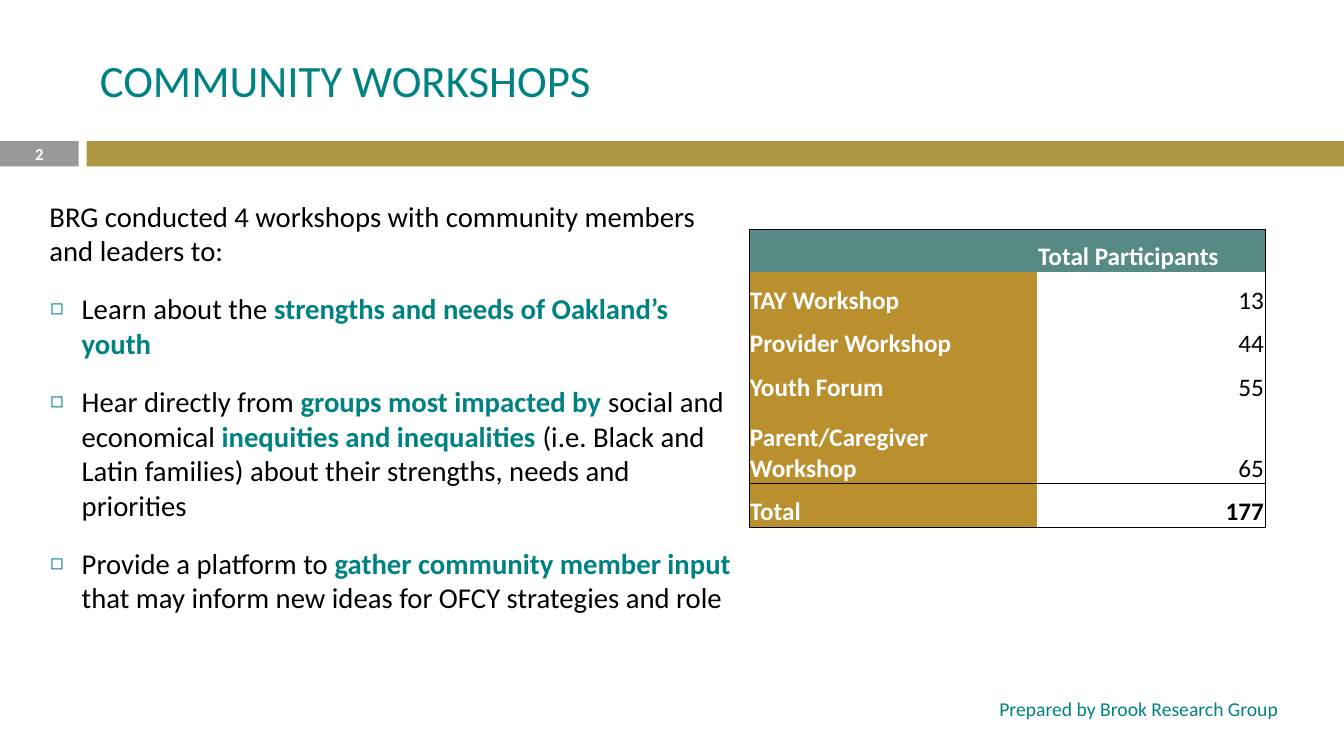
from dataclasses import dataclass

from pptx import Presentation
from pptx import util as u
from pptx.dml.color import RGBColor
from pptx.enum import shapes, text
from pptx.oxml import parse_xml
from pptx.oxml.ns import nsdecls, qn

WIDE, HIGH = u.Inches(13.33), u.Inches(7.5)
COLS, ROWS = 40, 30
LEFT, MID, RIGHT = text.PP_ALIGN.LEFT, text.PP_ALIGN.CENTER, text.PP_ALIGN.RIGHT


@dataclass(frozen=True)
class Theme:
    """Colours, font and type sizes of the slide."""
    face: str = "Calibri"
    teal: str = "008283"
    gold: str = "AE9742"
    gray: str = "999999"
    head: str = "578A85"
    side: str = "BA8F2D"
    ink: str = "000000"
    white: str = "FFFFFF"
    title: float = 32
    body: float = 20.5
    cell: float = 18
    foot: float = 14
    page: float = 11.9


def col(n):
    """Return the length of n grid columns."""
    return u.Emu(round(WIDE * n / COLS))


def row(n):
    """Return the length of n grid rows."""
    return u.Emu(round(HIGH * n / ROWS))


class Board:
    """Draws styled elements on one slide."""

    def __init__(self, slide, theme):
        """Keep the slide and its theme."""
        self.slide, self.theme = slide, theme

    def box(self, x, y, w, h):
        """Turn grid units into lengths."""
        return col(x), row(y), col(w), row(h)

    def place(self, item, *spot):
        """Move a placeholder to a grid spot."""
        item.left, item.top, item.width, item.height = self.box(*spot)
        item.text_frame.auto_size = text.MSO_AUTO_SIZE.NONE
        item.text_frame.word_wrap = True
        return item.text_frame

    def font(self, font, size, tint, bold=False):
        """Style one font."""
        font.name, font.size, font.bold = self.theme.face, u.Pt(size), bold
        font.color.rgb = RGBColor.from_string(tint)

    def line(self, frame, words, size, tint, align=LEFT, bold=False):
        """Write one line of text in a frame."""
        para = frame.paragraphs[0]
        para.text, para.alignment = words, align
        self.font(para.font, size, tint, bold)

    def bar(self, tint, *spot):
        """Draw a plain filled bar."""
        bar = self.slide.shapes.add_shape(
            shapes.MSO_SHAPE.RECTANGLE, *self.box(*spot))
        bar.shadow.inherit = False
        bar.fill.solid()
        bar.fill.fore_color.rgb = RGBColor.from_string(tint)
        bar.line.fill.background()

    def title(self, words, *spot):
        """Fill the title placeholder."""
        frame = self.place(self.slide.shapes.title, *spot)
        frame.vertical_anchor = text.MSO_ANCHOR.MIDDLE
        self.line(frame, words, self.theme.title, self.theme.teal)

    def note(self, words, size, tint, align, bold, *spot):
        """Add a text box with one line."""
        frame = self.slide.shapes.add_textbox(*self.box(*spot)).text_frame
        frame.word_wrap = True
        frame.vertical_anchor = text.MSO_ANCHOR.MIDDLE
        self.line(frame, words, size, tint, align, bold)

    def list(self, lead, items, *spot):
        """Fill the body with a lead and bullets; odd pieces stand out."""
        frame = self.place(self.slide.placeholders[1], *spot)
        for n, parts in enumerate([[lead], *items]):
            para = frame.add_paragraph() if n else frame.paragraphs[0]
            para.space_before, para.space_after = u.Pt(7), u.Pt(10)
            self.font(para.font, self.theme.body, self.theme.ink)
            for k, part in enumerate(parts):
                run = para.add_run()
                run.text = part
                if k % 2:
                    self.font(run.font, self.theme.body, self.theme.teal, True)
            self.bullet(para, n > 0)

    def bullet(self, para, shown):
        """Set the indent and the bullet of a paragraph."""
        props = para._p.get_or_add_pPr()
        props.set("marL", str(u.Inches(0.44 if shown else 0.12)))
        props.set("indent", str(u.Inches(-0.31 if shown else 0)))
        marks = (f'<a:buClr {nsdecls("a")}><a:srgbClr val="{self.theme.teal}"/></a:buClr>',
                 f'<a:buSzPct {nsdecls("a")} val="75000"/>',
                 f'<a:buChar {nsdecls("a")} char="◻"/>')
        for mark in marks if shown else [f'<a:buNone {nsdecls("a")}/>']:
            props.find(qn("a:defRPr")).addprevious(parse_xml(mark))

    def edge(self, cell, sides):
        """Draw thin borders on the named sides of a cell."""
        props = cell._tc.get_or_add_tcPr()
        for n, side in enumerate(s for s in "LRTB" if s in sides):
            props.insert(n, parse_xml(
                f'<a:ln{side} {nsdecls("a")} w="{u.Pt(0.5)}"><a:solidFill>'
                f'<a:srgbClr val="{self.theme.ink}"/></a:solidFill></a:ln{side}>'))

    def table(self, data, wide, tall, x, y):
        """Add a table with a header row, a label column and a total row."""
        look, last = self.theme, len(data) - 1
        frame = self.slide.shapes.add_table(
            len(data), len(wide), *self.box(x, y, sum(wide), sum(tall)))
        grid = frame.table
        grid.first_row = grid.horz_banding = False
        for style in frame._element.iter(qn("a:tableStyleId")):
            style.text = "{2D5ABB26-0587-4C30-8999-92F81FD0307C}"
        for n, w in enumerate(wide):
            grid.columns[n].width = col(w)
        for r, cells in enumerate(data):
            grid.rows[r].height = row(tall[r])
            for c, words in enumerate(cells):
                cell = grid.cell(r, c)
                cell.margin_left = cell.margin_right = cell.margin_top = u.Inches(0.01)
                cell.margin_bottom = 0
                cell.vertical_anchor = text.MSO_ANCHOR.BOTTOM
                value = r > 0 and c > 0
                fill = look.head if r == 0 else look.white if c else look.side
                cell.fill.solid()
                cell.fill.fore_color.rgb = RGBColor.from_string(fill)
                self.line(cell.text_frame, words, look.cell,
                          look.ink if value else look.white,
                          RIGHT if value else LEFT, not value or r == last)
                self.edge(cell, ("R" if c else "L") + ("T" if r in (0, last) else "")
                          + ("B" if r >= last - 1 else ""))


def main():
    """Build and save the slide."""
    deck = Presentation()
    deck.slide_width, deck.slide_height = WIDE, HIGH
    look = Theme()
    board = Board(deck.slides.add_slide(deck.slide_layouts[1]), look)
    board.bar(look.gray, 0, 5.6, 2.34, 1)
    board.bar(look.gold, 2.58, 5.6, COLS - 2.58, 1)
    board.title("COMMUNITY WORKSHOPS", 2.67, 1, 35.67, 4.32)
    board.note("Prepared by Brook Research Group", look.foot, look.teal,
               RIGHT, False, 14.64, 27.32, 23.7, 1.6)
    board.note("2", look.page, look.white, MID, True, 0, 5.56, 2.34, 1.08)
    board.list(
        "BRG conducted 4 workshops with community members and leaders to:",
        [["Learn about the ", "strengths and needs of Oakland’s youth"],
         ["Hear directly from ", "groups most impacted by ",
          "social and economical ", "inequities and inequalities",
          " (i.e. Black and Latin families) about their strengths, needs and priorities"],
         ["Provide a platform to ", "gather community member input ",
          "that may inform new ideas for OFCY strategies and role"]],
        0.81, 7.68, 21.48, 22.24)
    board.table(
        [("", "Total Participants"), ("TAY Workshop", "13"),
         ("Provider Workshop", "44"), ("Youth Forum", "55"),
         ("Parent/Caregiver Workshop", "65"), ("Total", "177")],
        (8.58, 6.78), (1.73, 1.73, 1.73, 1.73, 3.2, 1.73), 22.29, 9.08)
    deck.save("out.pptx")


if __name__ == "__main__":
    main()
